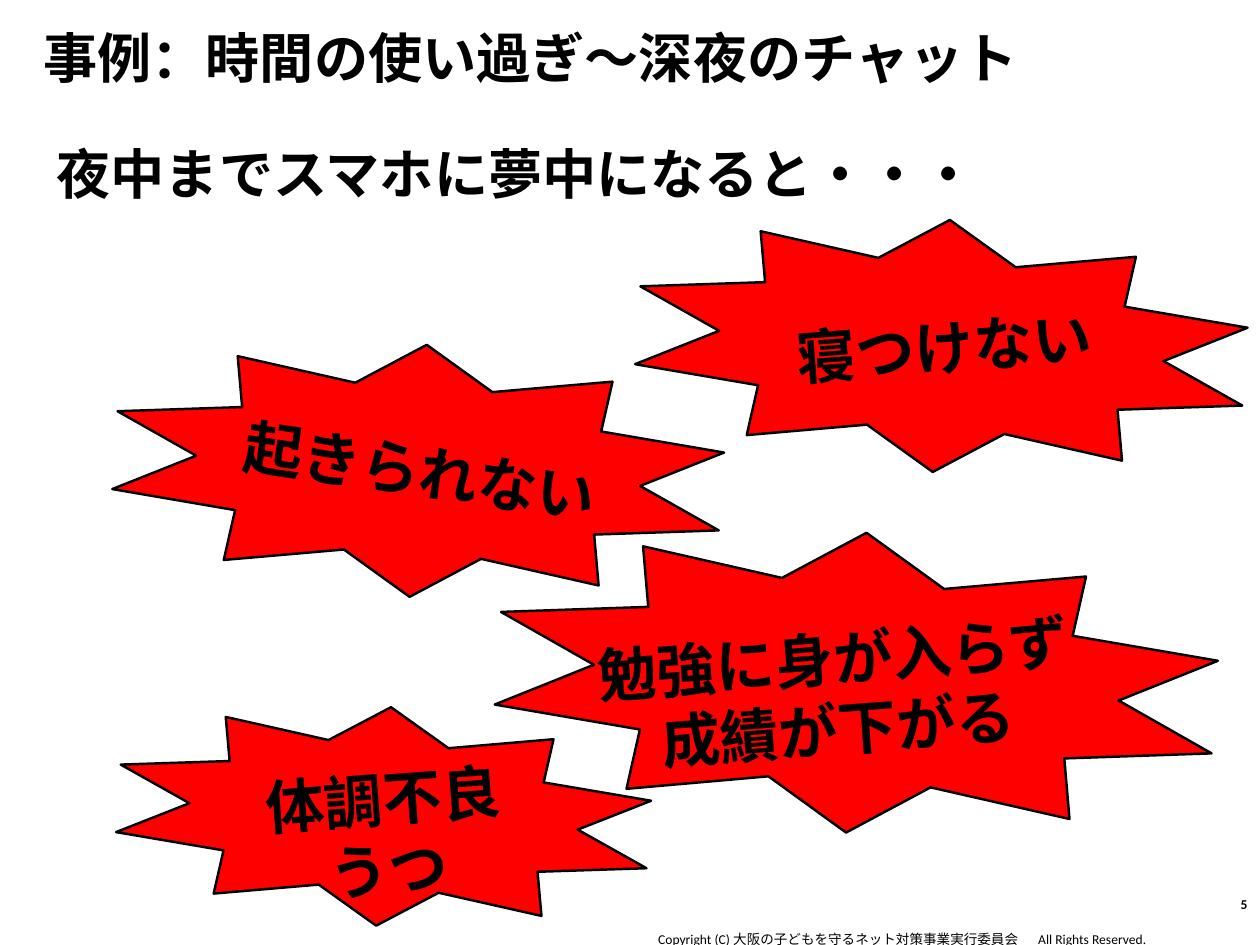
from lxml import etree
from pptx import Presentation
from pptx.dml.color import RGBColor
from pptx.enum.shapes import MSO_SHAPE
from pptx.enum.text import MSO_ANCHOR, PP_ALIGN
from pptx.oxml.ns import qn
from pptx.util import Inches, Pt

STAR = MSO_SHAPE.STAR_10_POINT
TOP, MIDDLE = MSO_ANCHOR.TOP, MSO_ANCHOR.MIDDLE
LEFT, CENTER, RIGHT = PP_ALIGN.LEFT, PP_ALIGN.CENTER, PP_ALIGN.RIGHT
BLACK = RGBColor(0, 0, 0)
RED = RGBColor(255, 0, 0)
LATIN, GOTHIC = "Calibri", "Noto Sans CJK JP"

SLIDE_W, SLIDE_H = Inches(14.22), Inches(10.67)
COLUMNS, ROWS = 100, 75
COLUMN, ROW = SLIDE_W / COLUMNS, SLIDE_H / ROWS
BURST_TILT = 3.9
LABEL_LINE, LABEL_PADDING = 5.62, 0.71
STANDARD_INSETS = (0.7, 0.35, 0.7, 0.35)

HEADING_STYLE = {"size": Pt(44), "bold": True, "name": GOTHIC}
LABEL_STYLE = {"size": Pt(48), "bold": True, "name": LATIN}
NUMBER_STYLE = {"size": Pt(11), "bold": True, "name": LATIN}
COPYRIGHT_STYLE = {"size": Pt(11), "bold": False, "name": LATIN}

# Each consequence: lines, star box, label shift from the star centre, label width, label tilt
CONSEQUENCES = [
    (["起きられない"], (9.07, 27.35, 48.24, 20.04), (0.17, -0.03), 48.73, 8.5),
    (["寝つけない"], (50.56, 17.44, 48.3, 20.04), (0.21, 0.03), 48.73, -4.3),
    (["体調不良", "うつ"], (9.35, 56.11, 42.19, 17.37), (0.18, 1.37), 48.73, -4.3),
    (["勉強に身が入らず", "成績が下がる"], (39.45, 42.26, 57.02, 23.84), (-1.65, 0.8), 52.6, -4.3),
]


def place(box):
    """Turn a box in grid columns and rows into slide lengths."""
    left, top, width, height = box
    return [round(n) for n in (left * COLUMN, top * ROW, width * COLUMN, height * ROW)]


def write(shapes, box, lines, style, align=LEFT, anchor=TOP,
          insets=STANDARD_INSETS, wrap=True, spacing=None):
    """Add a text box holding one paragraph per line and return it."""
    text_box = shapes.add_textbox(*place(box))
    frame = text_box.text_frame
    sides = ("margin_left", "margin_top", "margin_right", "margin_bottom")
    settings = {side: round(inset * COLUMN) for side, inset in zip(sides, insets)}
    settings.update(word_wrap=wrap, vertical_anchor=anchor)
    for key, value in settings.items():
        setattr(frame, key, value)
    for number, line in enumerate(lines):
        paragraph = frame.add_paragraph() if number else frame.paragraphs[0]
        paragraph.alignment = align
        if spacing:
            paragraph.line_spacing = spacing
        run = paragraph.add_run()
        run.text = line
        run.font.color.rgb = BLACK
        for key, value in style.items():
            setattr(run.font, key, value)
        properties = run._r.get_or_add_rPr()
        etree.SubElement(properties, qn("a:ea")).set("typeface", style["name"])
    return text_box


def add_headings(shapes):
    """Add the case heading and the question below it."""
    write(shapes, (2.32, 10.9, 86.42, 4.5), ["夜中までスマホに夢中になると・・・"],
          HEADING_STYLE, anchor=MIDDLE, insets=(2.18, 1.41, 0.7, 0.35))
    write(shapes, (0, 2.04, 99.71, 6.19), ["事例：時間の使い過ぎ～深夜のチャット"],
          HEADING_STYLE, insets=(3.45, 0.49, 0.98, 0.49), spacing=0.9)


def add_burst(shapes, lines, box, shift, label_width, label_tilt):
    """Add one red star with its tilted label, grouped together."""
    burst = shapes.add_group_shape().shapes
    star = burst.add_shape(STAR, *place(box))
    star.adjustments[0] = 0.348
    star.rotation = BURST_TILT
    star.shadow.inherit = False
    star.fill.solid()
    star.fill.fore_color.rgb = RED
    star.line.color.rgb = BLACK
    star.line.width = Pt(2)
    left, top, width, height = box
    label_height = LABEL_PADDING + LABEL_LINE * len(lines)
    label_box = (left + (width - label_width) / 2 + shift[0],
                 top + (height - label_height) / 2 + shift[1],
                 label_width, label_height)
    label = write(burst, label_box, lines, LABEL_STYLE, CENTER)
    label.rotation = label_tilt % 360


def add_footer(shapes):
    """Add the copyright line and the page number."""
    write(shapes, (43.38, 73.83, 56.46, 1.34),
          ["Copyright (C) ⼤阪の⼦どもを守るネット対策事業実⾏委員会 　 All Rights Reserved."],
          COPYRIGHT_STYLE, CENTER, MIDDLE, insets=(0, 0, 0, 0))
    write(shapes, (96.9, 70.73, 2.81, 2.04), ["5"], NUMBER_STYLE, RIGHT, wrap=False)


def main():
    """Build the slide and save it."""
    deck = Presentation()
    deck.slide_width, deck.slide_height = SLIDE_W, SLIDE_H
    shapes = deck.slides.add_slide(deck.slide_layouts[6]).shapes
    add_footer(shapes)
    add_headings(shapes)
    for consequence in CONSEQUENCES:
        add_burst(shapes, *consequence)
    deck.save("out.pptx")


if __name__ == "__main__":
    main()
